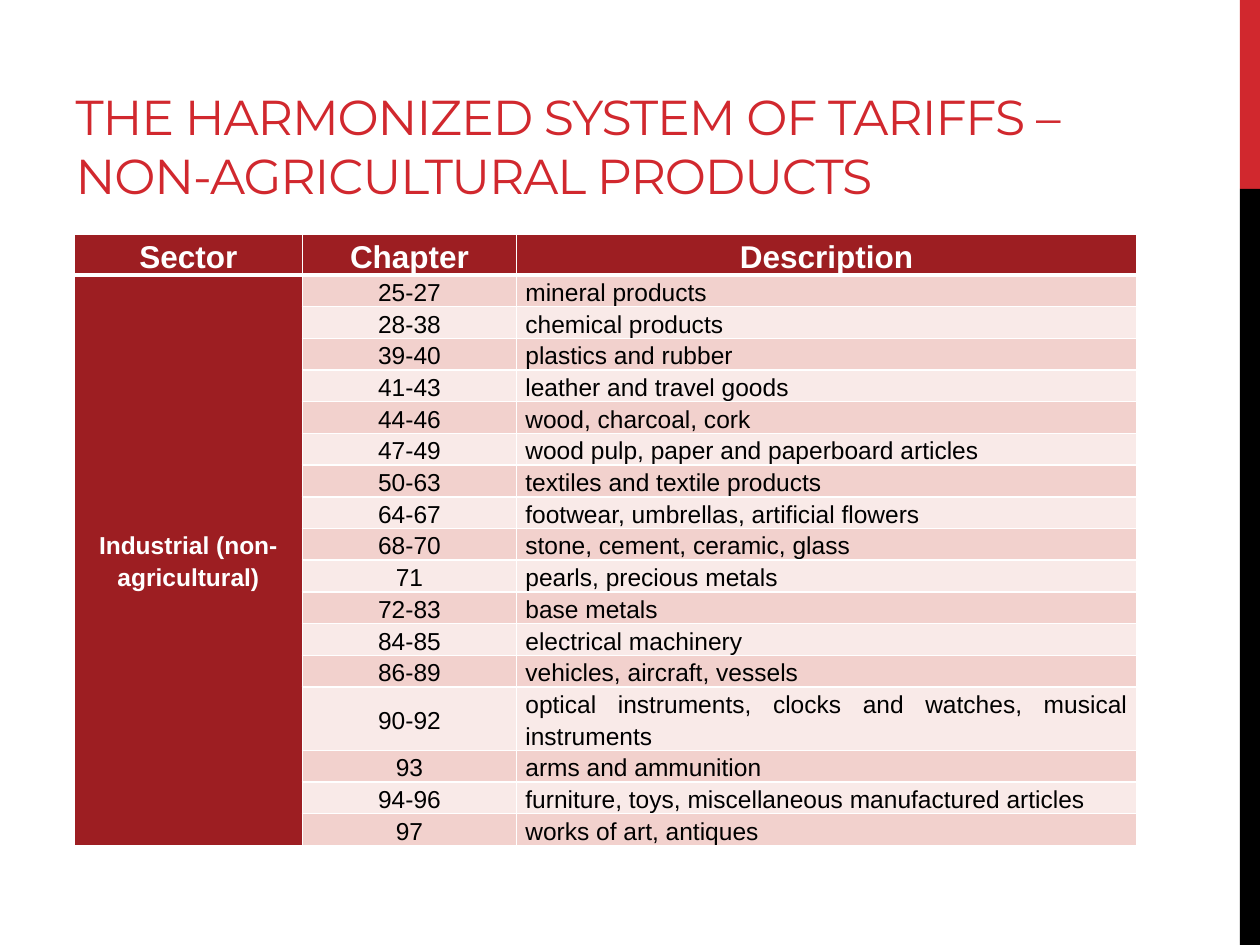
import pptx
import pptx.util
import pptx.dml.color
import pptx.enum.shapes
import pptx.enum.text
import pptx.oxml
import pptx.oxml.ns

Inches, Pt = pptx.util.Inches, pptx.util.Pt
RGBColor = pptx.dml.color.RGBColor
ALIGN = pptx.enum.text.PP_ALIGN
ANCHOR = pptx.enum.text.MSO_ANCHOR

RED = RGBColor(0xD1, 0x28, 0x2E)
DARK_RED = RGBColor(0x9D, 0x1E, 0x22)
ROSE = RGBColor(0xF2, 0xD1, 0xCD)
PALE_ROSE = RGBColor(0xF9, 0xEA, 0xE8)
BLACK = RGBColor(0, 0, 0)
WHITE = RGBColor(0xFF, 0xFF, 0xFF)

HEADINGS = ("Sector", "Chapter", "Description")
SECTOR = "Industrial (non-agricultural)"
CHAPTERS = (
    ("25-27", "mineral products"),
    ("28-38", "chemical products"),
    ("39-40", "plastics and rubber"),
    ("41-43", "leather and travel goods"),
    ("44-46", "wood, charcoal, cork"),
    ("47-49", "wood pulp, paper and paperboard articles"),
    ("50-63", "textiles and textile products"),
    ("64-67", "footwear, umbrellas, artificial flowers"),
    ("68-70", "stone, cement, ceramic, glass"),
    ("71", "pearls, precious metals"),
    ("72-83", "base metals"),
    ("84-85", "electrical machinery"),
    ("86-89", "vehicles, aircraft, vessels"),
    ("90-92", "optical instruments, clocks and watches, musical instruments"),
    ("93", "arms and ammunition"),
    ("94-96", "furniture, toys, miscellaneous manufactured articles"),
    ("97", "works of art, antiques"),
)
CELL_FORMAT = {
    "margin_left": Inches(0.07),
    "margin_right": Inches(0.07),
    "margin_top": 0,
    "margin_bottom": 0,
    "vertical_anchor": ANCHOR.MIDDLE,
}


def set_format(target, values):
    for name, value in values.items():
        setattr(target, name, value)


def add_borders(cell, bottom_width):
    """Draw white lines around a cell; they must precede its fill in the XML."""
    properties = cell._tc.get_or_add_tcPr()
    widths = {"lnL": 1, "lnR": 1, "lnT": 1, "lnB": bottom_width}
    for position, (side, width) in enumerate(widths.items()):
        line = pptx.oxml.parse_xml(
            f'<a:{side} {pptx.oxml.ns.nsdecls("a")} w="{Pt(width)}">'
            f'<a:solidFill><a:srgbClr val="{WHITE}"/></a:solidFill></a:{side}>'
        )
        properties.insert(position, line)


deck = pptx.Presentation()
deck.slide_width, deck.slide_height = Inches(10), Inches(7.5)
page = deck.slides.add_slide(deck.slide_layouts[5])

# Side band
for top, height, color in ((0, 1.5, RED), (1.5, 6, BLACK)):
    band = page.shapes.add_shape(
        pptx.enum.shapes.MSO_SHAPE.RECTANGLE,
        Inches(9.84), Inches(top), Inches(0.16), Inches(height),
    )
    band.shadow.inherit = False
    band.fill.solid()
    band.fill.fore_color.rgb = color
    band.line.fill.background()

# Title
title = page.shapes.title
set_format(title, {"left": Inches(0.5), "top": Inches(0.17),
                   "width": Inches(8.53), "height": Inches(1.5)})
set_format(title.text_frame, {"vertical_anchor": ANCHOR.BOTTOM, "word_wrap": True,
                              "auto_size": pptx.enum.text.MSO_AUTO_SIZE.NONE})
para = title.text_frame.paragraphs[0]
para.alignment = ALIGN.LEFT
span = para.add_run()
span.text = "THE HARMONIZED SYSTEM OF TARIFFS – NON-AGRICULTURAL PRODUCTS"
set_format(span.font, {"name": "Montserrat", "size": Pt(28)})
span.font.color.rgb = RED
span.font._element.set("spc", "-60")

# Table of chapters
rows = [HEADINGS] + [("", *chapter) for chapter in CHAPTERS]
rows[1] = (SECTOR, *CHAPTERS[0])
table = page.shapes.add_table(
    len(rows), len(HEADINGS), Inches(0.59), Inches(1.86), Inches(8.43), Inches(4.75)
).table
for column, width in zip(table.columns, (1.81, 1.7, 4.92)):
    column.width = Inches(width)

for row_index, texts in enumerate(rows):
    is_header = row_index == 0
    table.rows[row_index].height = Inches(0.21 if is_header else 0.19)
    for column_index, text in enumerate(texts):
        cell = table.cell(row_index, column_index)
        is_dark = is_header or column_index == 0
        set_format(cell, CELL_FORMAT)
        cell.fill.solid()
        cell.fill.fore_color.rgb = DARK_RED if is_dark else ROSE if row_index % 2 else PALE_ROSE
        add_borders(cell, 3 if is_header else 1)
        if not text:
            continue
        para = cell.text_frame.paragraphs[0]
        is_description = column_index == 2 and not is_header
        set_format(para, {"alignment": ALIGN.JUSTIFY if is_description else ALIGN.CENTER,
                          "line_spacing": 1.15})
        if text == SECTOR:
            para.space_after = Pt(10)
        span = para.add_run()
        span.text = text
        set_format(span.font, {"name": "Arial", "size": Pt(18 if is_header else 14),
                               "bold": is_dark})
        span.font.color.rgb = WHITE if is_dark else BLACK

table.cell(1, 0).merge(table.cell(len(rows) - 1, 0))

deck.save("out.pptx")
